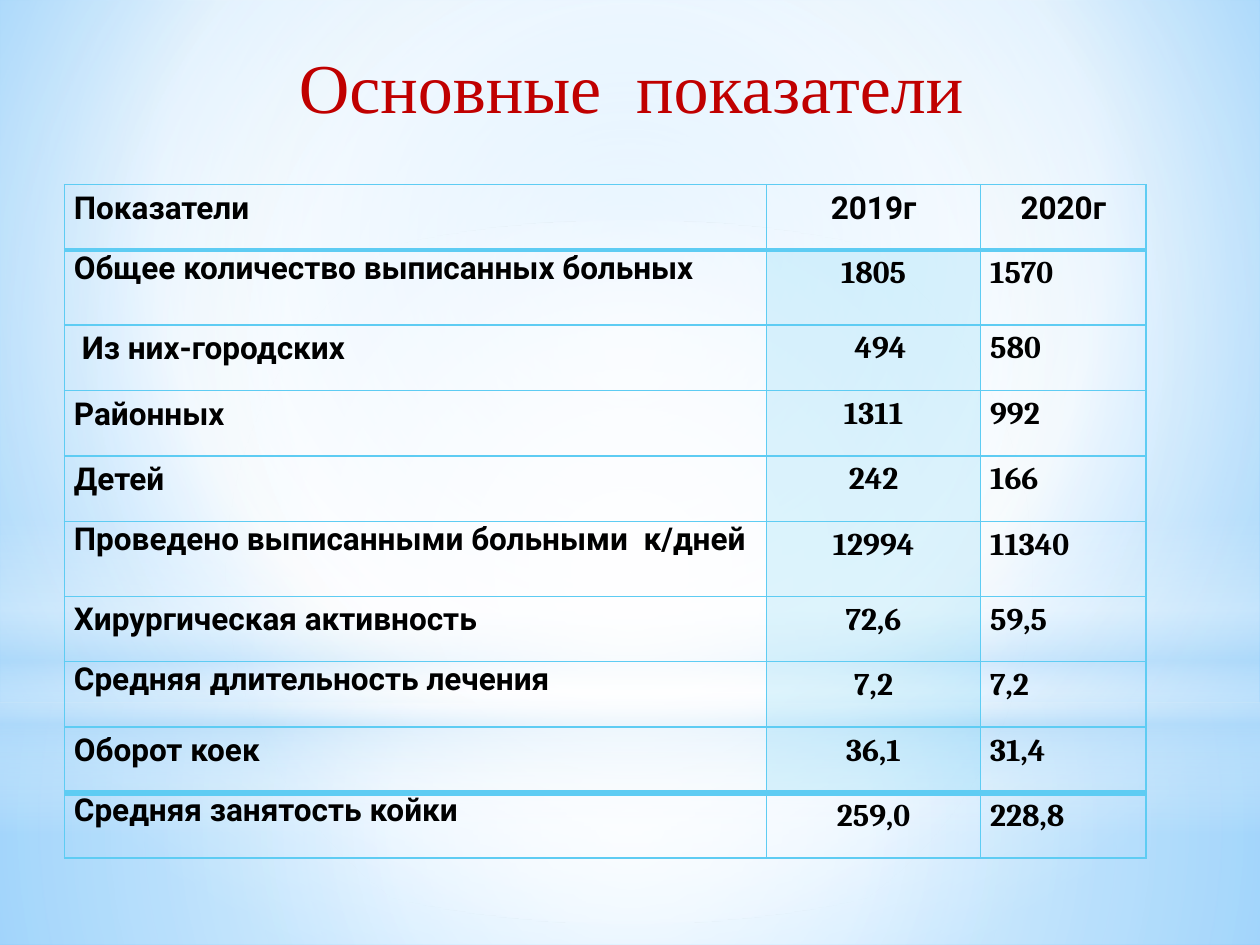
import dataclasses

import pptx
import pptx.dml.color
import pptx.enum.shapes
import pptx.enum.text
import pptx.oxml
import pptx.oxml.ns
import pptx.util

Cm = pptx.util.Cm
Pt = pptx.util.Pt
Rgb = pptx.dml.color.RGBColor.from_string
Kind = pptx.enum.shapes.MSO_SHAPE
Align = pptx.enum.text.PP_ALIGN
XMLNS = pptx.oxml.ns.nsdecls("a")
qn = pptx.oxml.ns.qn


@dataclasses.dataclass(frozen=True)
class Theme:
    red: str = "C00000"
    black: str = "000000"
    cyan: str = "5ECCF3"
    white: str = "FFFFFF"
    pale: str = "B4DCFA"
    sky: str = "9ED5FF"
    blue: str = "5BB9FF"
    tint: int = 20
    head_font: str = "Times New Roman"
    label_font: str = "Roboto"
    value_font: str = "Cambria"
    head_size: int = 40
    body_size: int = 18
    spacing: float = 1.15


def alpha(opaque):
    return f'<a:alpha {XMLNS} val="{opaque * 1000}"/>'


def shade(root, stops, focus=None):
    """Swap the empty fill under root for a gradient: round with a focus, else downward.

    Stops are (position, colour, opacity), all but the colour in percent.
    """
    marks = "".join(
        f'<a:gs pos="{pos * 1000}"><a:srgbClr val="{color}">{alpha(opaque)}</a:srgbClr></a:gs>'
        for pos, color, opaque in stops)
    if focus:
        sides = " ".join(f'{side}="{part * 1000}"' for side, part in zip("ltrb", focus))
        course = f'<a:path path="circle"><a:fillToRect {sides}/></a:path>'
    else:
        course = '<a:lin ang="5400000" scaled="0"/>'
    empty = root.find(".//" + qn("a:noFill"))
    empty.getparent().replace(empty, pptx.oxml.parse_xml(
        f'<a:gradFill {XMLNS} rotWithShape="1"><a:gsLst>{marks}</a:gsLst>{course}</a:gradFill>'))


class Page:
    def __init__(self, deck, theme):
        self.theme = theme
        self.slide = deck.slides.add_slide(deck.slide_layouts[5])

    def ground(self, stops, focus):
        self.slide.background.fill.background()
        shade(self.slide.element, stops, focus)

    def glow(self, kind, top, height, stops, focus=None):
        """Add a full-width shape with a soft gradient."""
        shape = self.slide.shapes.add_shape(kind, 0, Cm(top), Cm(25.4), Cm(height))
        shape.shadow.inherit = False
        shape.line.fill.background()
        shape.fill.background()
        shade(shape.element, stops, focus)

    def title(self, text, left, top, width, height):
        title = self.slide.shapes.title
        title.left, title.top = Cm(left), Cm(top)
        title.width, title.height = Cm(width), Cm(height)
        # Bring the title in front of the glows
        title.element.getparent().append(title.element)
        frame = title.text_frame
        frame.text = text
        frame.vertical_anchor = pptx.enum.text.MSO_ANCHOR.TOP
        line = frame.paragraphs[0]
        line.alignment = Align.CENTER
        self.font(line, self.theme.head_font, self.theme.head_size, self.theme.red)

    def font(self, line, name, size, color, bold=False):
        line.font.name, line.font.size, line.font.bold = name, Pt(size), bold
        line.font.color.rgb = Rgb(color)

    def table(self, left, top, widths, heights, rules):
        """Add a plain table; rules holds the widths of its horizontal lines."""
        frame = self.slide.shapes.add_table(
            len(heights), len(widths), Cm(left), Cm(top), Cm(sum(widths)), Cm(sum(heights)))
        table = frame.table
        table.first_row = table.horz_banding = False
        for col, width in zip(table.columns, widths):
            col.width = Cm(width)
        for row, height, above, below in zip(table.rows, heights, rules, rules[1:]):
            row.height = Cm(height)
            for cell in row.cells:
                cell.margin_left = cell.margin_right = Cm(0.19)
                cell.margin_top = cell.margin_bottom = 0
                self.border(cell, {"L": 1, "R": 1, "T": above, "B": below})
                cell.fill.background()
        return table

    def border(self, cell, sides):
        props = cell._tc.get_or_add_tcPr()
        for side, width in sides.items():
            props.append(pptx.oxml.parse_xml(
                f'<a:ln{side} {XMLNS} w="{Pt(width)}"><a:solidFill>'
                f'<a:srgbClr val="{self.theme.cyan}"/></a:solidFill></a:ln{side}>'))

    def label(self, cell, text, name, align=Align.LEFT, spacing=None, after=0):
        cell.text = text
        line = cell.text_frame.paragraphs[0]
        line.alignment = align
        line.line_spacing = spacing or self.theme.spacing
        line.space_after = Pt(after)
        self.font(line, name, self.theme.body_size, self.theme.black, True)
        return line

    def wash(self, cell):
        """Fill the cell with a see-through tint."""
        cell.fill.solid()
        cell.fill.fore_color.rgb = Rgb(self.theme.cyan)
        color = cell._tc.tcPr.find(qn("a:solidFill") + "/" + qn("a:srgbClr"))
        color.append(pptx.oxml.parse_xml(alpha(self.theme.tint)))


HEADS = ("Показатели", "2019г", "2020г")
# Label, both years, label line spacing
ROWS = (
    ("Общее количество выписанных больных", "1805", "1570", 1.0),
    (" Из них-городских", "494", "580", 1.15),
    ("Районных", "1311", "992", 1.15),
    ("Детей", "242", "166", 1.15),
    ("Проведено выписанными больными  к/дней", "12994", "11340", 1.0),
    ("Хирургическая активность", "72,6", "59,5", 1.15),
    ("Средняя длительность лечения", "7,2", "7,2", 1.0),
    ("Оборот коек", "36,1", "31,4", 1.15),
    ("Средняя занятость койки", "259,0", "228,8", 1.0),
)
TALL = (1, 5)


def backdrop(page):
    theme = page.theme
    white, pale = theme.white, theme.pale
    mid = (50, 50, 50, 50)
    page.ground([(0, theme.sky, 100), (60, white, 100), (100, theme.blue, 100)],
                (20, 10, 20, 60))
    page.glow(Kind.RECTANGLE, 14.17, 4.88,
              [(0, white, 91), (37, white, 76), (100, pale, 79)], mid)
    page.glow(Kind.RECTANGLE, 0, 14.17,
              [(0, white, 89), (48, white, 62), (100, pale, 79)], mid)
    page.glow(Kind.RECTANGLE, 10.46, 6.35,
              [(0, white, 0), (29, white, 30), (45, pale, 40),
               (55, white, 26), (65, pale, 60), (100, white, 0)])
    page.glow(Kind.OVAL, 4.45, 14.17, [(0, white, 100), (56, white, 0)], mid)


def figures(page):
    theme = page.theme
    count = len(ROWS) + 1
    heights = [1.51 if row in TALL else 1.32 for row in range(count)]
    rules = [1, 2] + [1] * (count - 3) + [4, 1]
    table = page.table(1.3, 3.72, (14.15, 4.32, 3.33), heights, rules)
    for col, head in enumerate(HEADS):
        page.label(table.cell(0, col), head, theme.label_font,
                   Align.CENTER if col else Align.LEFT)
    for row, (name, old, new, spacing) in enumerate(ROWS, 1):
        page.label(table.cell(row, 0), name, theme.label_font, spacing=spacing)
        line = page.label(table.cell(row, 1), old, theme.value_font, Align.CENTER)
        if row == 2:
            line._p.get_or_add_pPr().set("marL", str(Cm(0.28)))
        if row < len(ROWS):
            page.wash(table.cell(row, 1))
        page.label(table.cell(row, 2), new, theme.value_font, after=10)


def main():
    deck = pptx.Presentation()
    deck.slide_width, deck.slide_height = Cm(25.4), Cm(19.05)
    page = Page(deck, Theme())
    backdrop(page)
    page.title("Основные  показатели ", 1.7, 0.74, 22.4, 3.18)
    figures(page)
    deck.save("out.pptx")


if __name__ == "__main__":
    main()
